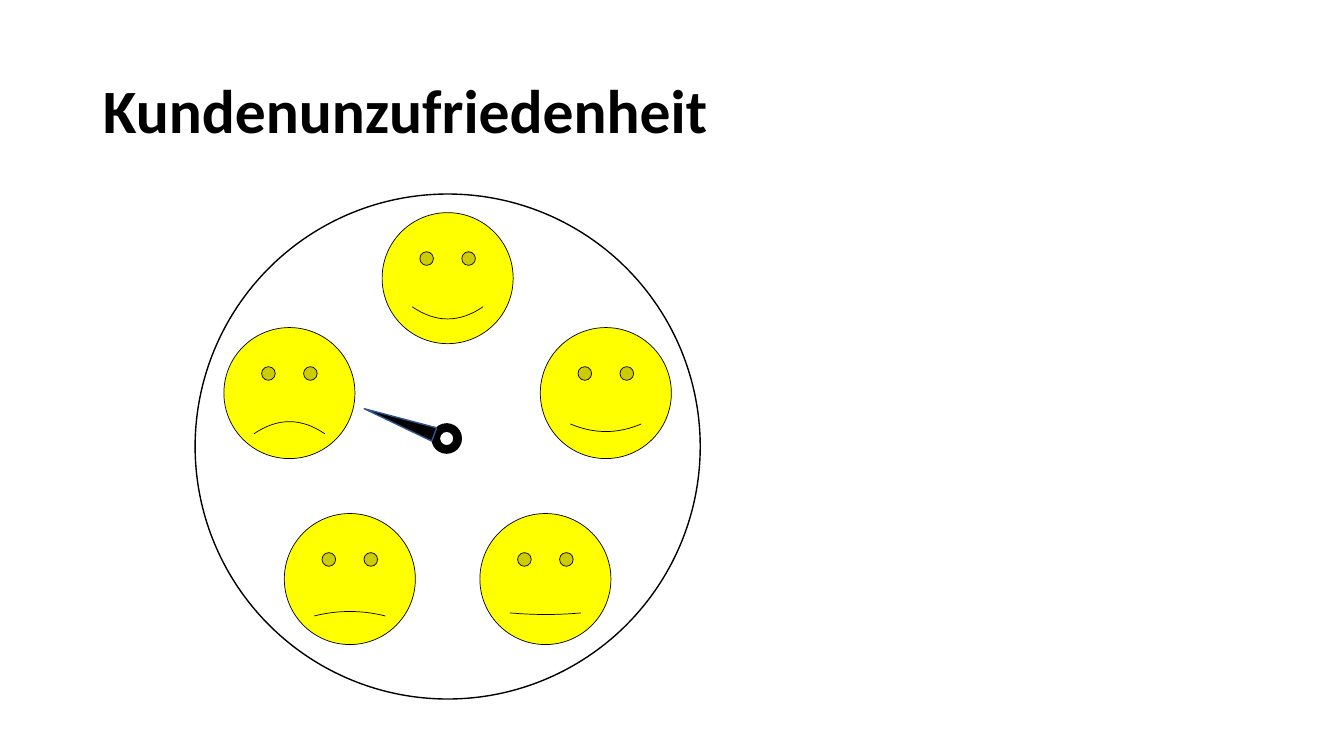
from math import cos, radians, sin

from pptx import Presentation
from pptx.dml.color import RGBColor
from pptx.enum.shapes import MSO_SHAPE
from pptx.enum.text import MSO_ANCHOR, MSO_AUTO_SIZE, PP_ALIGN
from pptx.util import Inches, Pt

COLORS = {"black": "000000", "yellow": "FFFF00", "blue": "325491"}
MOODS = [0.047, 0.029, 0.006, -0.017, -0.047]
MID_X, MID_Y, RADIUS = 4.44, 4.41, 1.65


class Board:
    """Hold the slide and its style, and draw each kind of element."""

    def __init__(self, deck):
        self.font = "Calibri"
        self.slide = deck.slides.add_slide(deck.slide_layouts[5])

    def color(self, name):
        return RGBColor.from_string(COLORS[name])

    def title(self, text, left, top, width, height):
        box = self.slide.shapes.title
        box.left, box.top = Inches(left), Inches(top)
        box.width, box.height = Inches(width), Inches(height)
        frame = box.text_frame
        frame.text = text
        frame.word_wrap = True
        frame.auto_size = MSO_AUTO_SIZE.NONE
        frame.vertical_anchor = MSO_ANCHOR.MIDDLE
        para = frame.paragraphs[0]
        para.alignment = PP_ALIGN.LEFT
        para.line_spacing = 0.9
        para.font.name = self.font
        para.font.size = Pt(44)
        para.font.bold = True
        para.font.color.rgb = self.color("black")

    def shape(self, kind, x, y, width, height, fill=None, line="black", weight=1):
        item = self.slide.shapes.add_shape(
            kind, Inches(x - width / 2), Inches(y - height / 2),
            Inches(width), Inches(height))
        item.shadow.inherit = False
        if fill:
            item.fill.solid()
            item.fill.fore_color.rgb = self.color(fill)
        else:
            item.fill.background()
        item.line.color.rgb = self.color(line)
        item.line.width = Pt(weight)
        return item

    def face(self, angle, mood):
        x = MID_X + RADIUS * sin(radians(angle))
        y = MID_Y - RADIUS * cos(radians(angle))
        face = self.shape(MSO_SHAPE.SMILEY_FACE, x, y, 1.3, 1.3, "yellow", weight=0.5)
        face.adjustments[0] = mood

    def needle(self, x, y, angle):
        needle = self.shape(MSO_SHAPE.ISOSCELES_TRIANGLE, x, y, 0.14, 0.74, "black", "blue")
        needle.adjustments[0] = 0.466
        needle.rotation = angle


def main():
    deck = Presentation()
    deck.slide_width, deck.slide_height = Inches(13.33), Inches(7.5)
    board = Board(deck)
    board.title("Kundenunzufriedenheit", 0.92, 0.4, 11.5, 1.45)
    for step, mood in enumerate(MOODS):
        board.face(step * 360 / len(MOODS), mood)
    board.shape(MSO_SHAPE.DONUT, 4.43, 4.35, 0.29, 0.29, "black")
    board.needle(3.96, 4.18, 290.6)
    board.shape(MSO_SHAPE.OVAL, MID_X, 4.43, 5.01, 5.01)
    deck.save("out.pptx")


if __name__ == "__main__":
    main()
